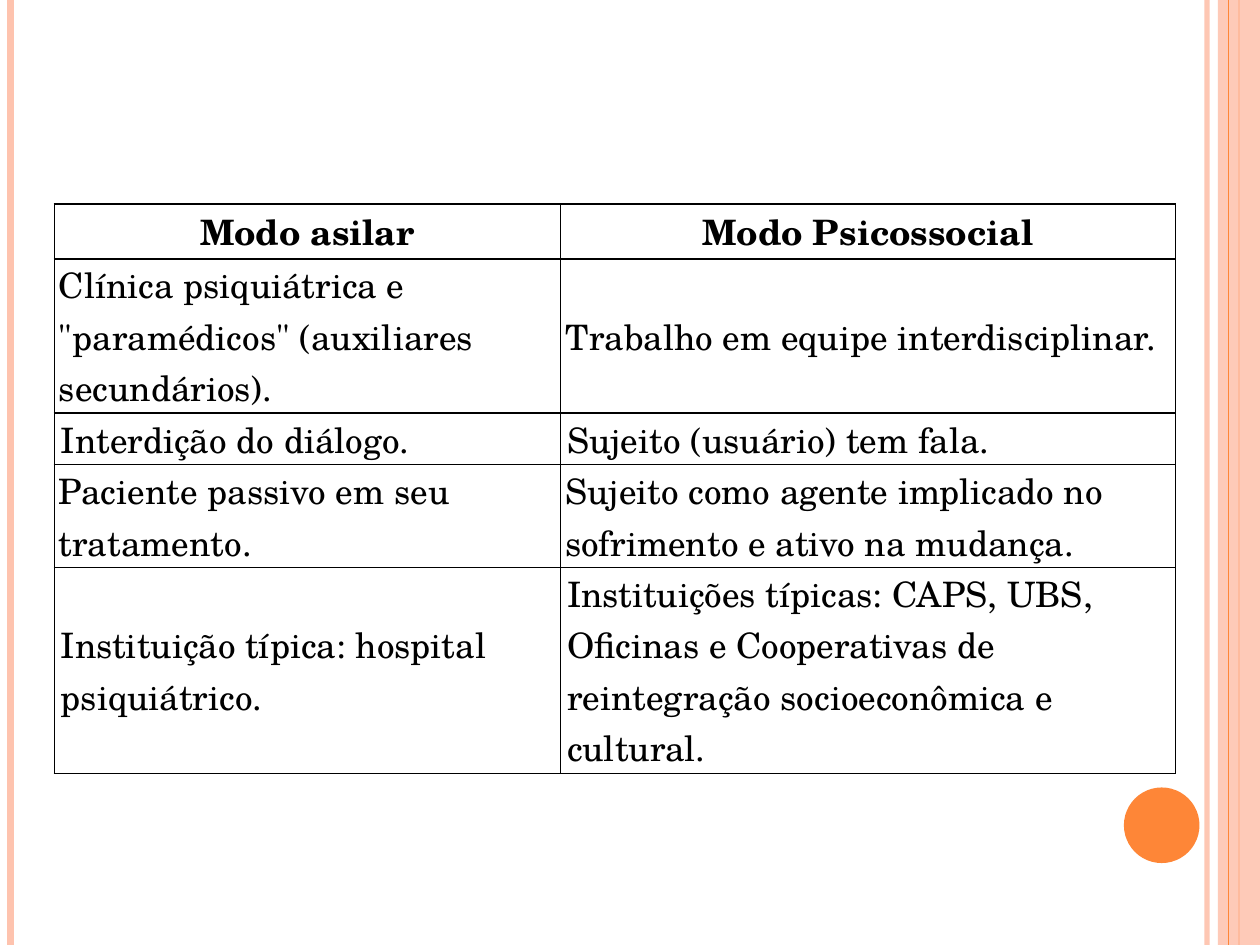
"""Build a slide comparing the asylum and psychosocial modes of care."""
from dataclasses import dataclass
from typing import Optional

import lxml.etree
import pptx
import pptx.dml.color
import pptx.enum.shapes
import pptx.enum.text
import pptx.oxml.ns
import pptx.util

Pt = pptx.util.Pt
RGBColor = pptx.dml.color.RGBColor
qn = pptx.oxml.ns.qn

ORANGE = RGBColor(0xFE, 0x86, 0x37)
PEACH = RGBColor(0xFE, 0xC3, 0xAE)
BLACK = RGBColor(0, 0, 0)
FONT = "TeX Gyre Schola"
SLIDE_WIDTH, SLIDE_HEIGHT = 720, 540


@dataclass(frozen=True)
class Stripe:
    x: float
    width: float
    color: RGBColor
    opacity: Optional[int] = None


@dataclass(frozen=True)
class Comparison:
    asylum: str
    psychosocial: str
    height: float
    inset: float
    heading: bool = False


OUTER_STRIPES = [
    Stripe(689.75, 3, PEACH, 93),
    Stripe(6, 4.5, PEACH),
    Stripe(708, 1.5, ORANGE),
]
INNER_STRIPE = Stripe(702, 0.75, ORANGE)
COLUMN_WIDTHS = [289.3, 351.5]
COMPARISONS = [
    Comparison("Modo asilar", "Modo Psicossocial", 31.2, 2.7, True),
    Comparison('Clínica psiquiátrica e "paramédicos" (auxiliares secundários).',
               "Trabalho em equipe interdisciplinar.", 88, 2.7),
    Comparison("Interdição do diálogo.", "Sujeito (usuário) tem fala.", 29.4, 3.75),
    Comparison("Paciente passivo em seu tratamento.",
               "Sujeito como agente implicado no sofrimento e ativo na mudança.",
               58.8, 2.7),
    Comparison("Instituição típica: hospital psiquiátrico.",
               "Instituições típicas: CAPS, UBS, Oficinas e Cooperativas de "
               "reintegração socioeconômica e cultural.", 117.6, 3.75),
]


def set_opacity(shape, percent: int) -> None:
    color = shape._element.spPr.find(".//" + qn("a:srgbClr"))
    lxml.etree.SubElement(color, qn("a:alpha"), val=str(percent * 1000))


def draw_stripe(slide, stripe: Stripe) -> None:
    line = slide.shapes.add_connector(
        pptx.enum.shapes.MSO_CONNECTOR.STRAIGHT,
        Pt(stripe.x), Pt(0), Pt(stripe.x), Pt(SLIDE_HEIGHT))
    line.line.color.rgb = stripe.color
    line.line.width = Pt(stripe.width)
    lxml.etree.SubElement(line._element.spPr, qn("a:effectLst"))
    if stripe.opacity is not None:
        set_opacity(line, stripe.opacity)


def draw_block(slide, kind, left: float, top: float, width: float,
               height: float, color: RGBColor):
    block = slide.shapes.add_shape(kind, Pt(left), Pt(top), Pt(width), Pt(height))
    block.shadow.inherit = False
    block.fill.solid()
    block.fill.fore_color.rgb = color
    block.line.fill.background()
    return block


def add_borders(cell) -> None:
    properties = cell._tc.get_or_add_tcPr()
    for index, side in enumerate(("lnL", "lnR", "lnT", "lnB")):
        border = lxml.etree.Element(qn(f"a:{side}"), w=str(Pt(1)))
        fill = lxml.etree.SubElement(border, qn("a:solidFill"))
        lxml.etree.SubElement(fill, qn("a:srgbClr"), val=str(BLACK))
        properties.insert(index, border)


def fill_cell(cell, text: str, comparison: Comparison) -> None:
    cell.fill.background()
    add_borders(cell)
    cell.margin_left = cell.margin_right = Pt(comparison.inset)
    cell.margin_top = cell.margin_bottom = Pt(0)
    cell.vertical_anchor = pptx.enum.text.MSO_ANCHOR.MIDDLE
    paragraph = cell.text_frame.paragraphs[0]
    alignments = pptx.enum.text.PP_ALIGN
    paragraph.alignment = alignments.CENTER if comparison.heading else alignments.LEFT
    run = paragraph.add_run()
    run.text = text
    run.font.name = FONT
    run.font.size = Pt(20)
    run.font.bold = comparison.heading
    run.font.color.rgb = BLACK


def draw_comparisons(slide) -> None:
    total_height = sum(comparison.height for comparison in COMPARISONS)
    table = slide.shapes.add_table(
        len(COMPARISONS), len(COLUMN_WIDTHS), Pt(31), Pt(116.7),
        Pt(sum(COLUMN_WIDTHS)), Pt(total_height)).table
    table.first_row = table.horz_banding = False
    for column, width in zip(table.columns, COLUMN_WIDTHS):
        column.width = Pt(width)
    for row, comparison in zip(table.rows, COMPARISONS):
        row.height = Pt(comparison.height)
        for cell, text in zip(row.cells, (comparison.asylum, comparison.psychosocial)):
            fill_cell(cell, text, comparison)


def main() -> None:
    presentation = pptx.Presentation()
    presentation.slide_width = Pt(SLIDE_WIDTH)
    presentation.slide_height = Pt(SLIDE_HEIGHT)
    slide = presentation.slides.add_slide(presentation.slide_layouts[6])
    shapes = pptx.enum.shapes.MSO_SHAPE
    for stripe in OUTER_STRIPES:
        draw_stripe(slide, stripe)
    side_band = draw_block(slide, shapes.RECTANGLE, 696, 0, 24, SLIDE_HEIGHT, PEACH)
    set_opacity(side_band, 87)
    draw_stripe(slide, INNER_STRIPE)
    draw_block(slide, shapes.OVAL, 642.25, 450, 43.2, 43.2, ORANGE)
    draw_comparisons(slide)
    presentation.save("out.pptx")


if __name__ == "__main__":
    main()
